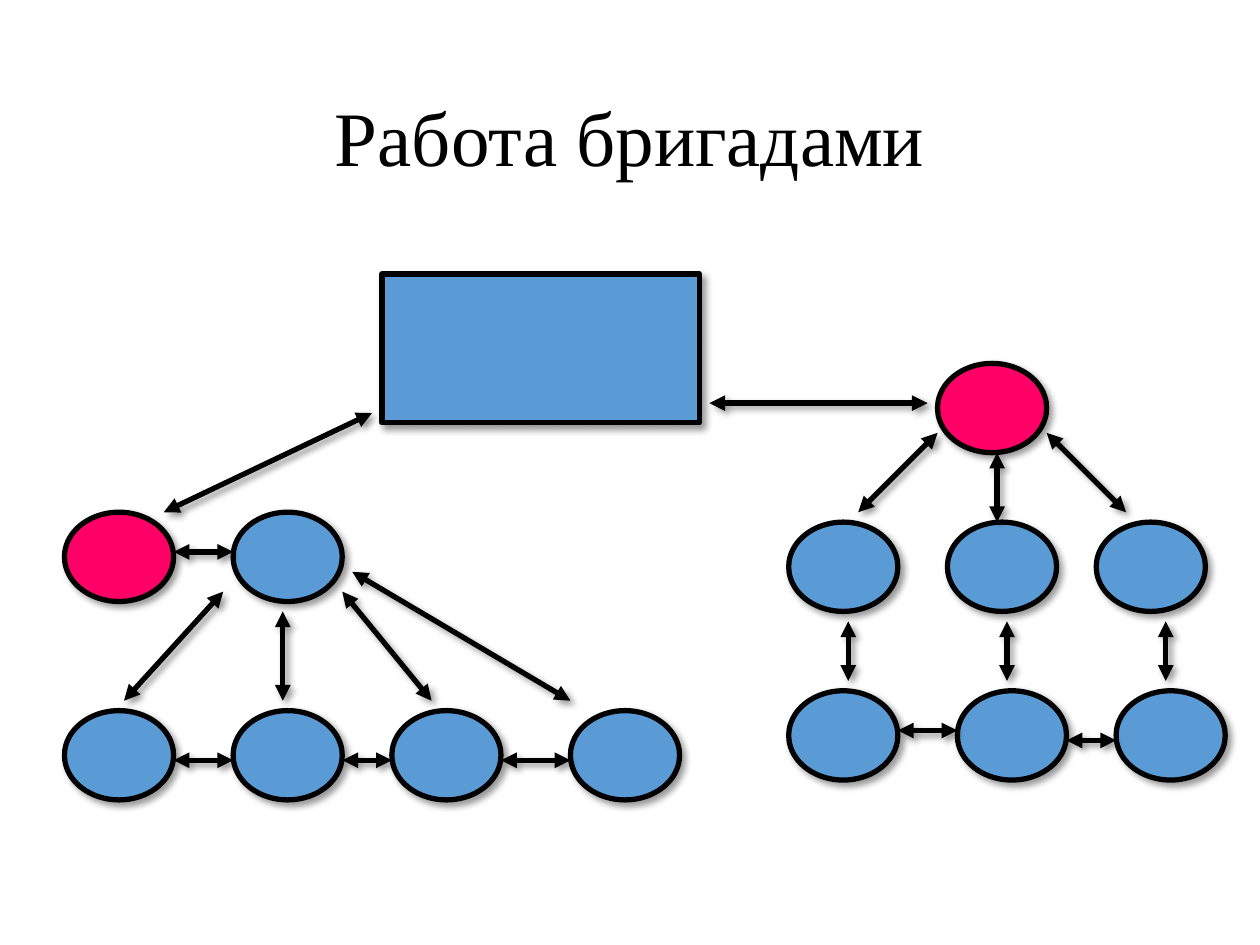
import pptx
import pptx.dml.color
import pptx.enum.shapes
import pptx.enum.text
import pptx.oxml
import pptx.oxml.ns
import pptx.util

COLORS = {"member": "5B9BD5", "leader": "FF0066", "ink": "000000"}
FONT = "Times New Roman"

# The diagram sits on a 2 mm grid, shifted a little from the slide's corner.
CELL = pptx.util.Mm(2)
SHIFT_X, SHIFT_Y = 0.5, 0.63
NODE_W, NODE_H = 11, 9

LEFT_LEADER = (6, 51)
LEFT_DEPUTY = (23, 51)
LEFT_CREW_COLS, LEFT_CREW_ROW = (6, 23, 39, 57), 71
RIGHT_LEADER = (94, 36)
RIGHT_UPPER_COLS, RIGHT_UPPER_ROW = (79, 95, 110), 52
RIGHT_LOWER_COLS, RIGHT_LOWER_ROW = (79, 96, 112), 69

# Start column and row, end column and row
ARROWS = [
    (37, 41, 16, 51), (93, 40, 71, 40),                         # boss to leaders
    (94, 43, 86, 51), (100, 45, 100, 52), (105, 43, 113, 51),   # right leader
    (22, 59, 12, 70), (28, 61, 28, 70),                         # left deputy
    (34, 59, 43, 70), (35, 57, 57, 70),
    *[(col, 62, col, 68) for col in (85, 101, 117)],            # right crew pairs
]


def rgb(name):
    return pptx.dml.color.RGBColor.from_string(COLORS[name])


def grid(col, row):
    return int((col + SHIFT_X) * CELL), int((row + SHIFT_Y) * CELL)


def add_shadow(sp):
    sp._element.spPr.append(pptx.oxml.parse_xml(
        f'<a:effectLst {pptx.oxml.ns.nsdecls("a")}>'
        '<a:outerShdw blurRad="50800" dist="38100" dir="2700000" algn="tl" rotWithShape="0">'
        f'<a:srgbClr val="{COLORS["ink"]}"><a:alpha val="40000"/></a:srgbClr>'
        '</a:outerShdw></a:effectLst>'))


def style_line(sp):
    sp.line.color.rgb = rgb("ink")
    sp.line.width = pptx.util.Pt(3)


def add_box(slide, kind, col, row, cols, rows, color):
    sp = slide.shapes.add_shape(kind, *grid(col, row), cols * CELL, rows * CELL)
    sp.fill.solid()
    sp.fill.fore_color.rgb = rgb(color)
    style_line(sp)
    add_shadow(sp)


def add_node(slide, col, row, color="member"):
    add_box(slide, pptx.enum.shapes.MSO_SHAPE.OVAL, col, row, NODE_W, NODE_H, color)


def add_arrow(slide, col1, row1, col2, row2):
    sp = slide.shapes.add_connector(pptx.enum.shapes.MSO_CONNECTOR.STRAIGHT,
                                    *grid(col1, row1), *grid(col2, row2))
    style_line(sp)
    ln = sp.line._get_or_add_ln()
    for end in ("headEnd", "tailEnd"):
        ln.append(pptx.oxml.parse_xml(
            f'<a:{end} {pptx.oxml.ns.nsdecls("a")} type="triangle"/>'))
    add_shadow(sp)


def link_neighbours(slide, cols, rows):
    """Join each node in a line to the next; rows holds the height of each arrow."""
    for left, right, row in zip(cols, cols[1:], rows):
        add_arrow(slide, right, row, left + NODE_W, row)


def add_title(slide, text, prs):
    w, h = prs.slide_width, prs.slide_height
    sp = slide.shapes.add_textbox(int(w * 0.069), int(h * 0.053),
                                  int(w * 0.862), int(h * 0.193))
    tf = sp.text_frame
    tf.word_wrap = True
    tf.vertical_anchor = pptx.enum.text.MSO_ANCHOR.MIDDLE
    p = tf.paragraphs[0]
    p.text = text
    p.alignment = pptx.enum.text.PP_ALIGN.CENTER
    p.line_spacing = 0.9
    p.font.name = FONT
    p.font.size = pptx.util.Pt(44)
    p.font.color.rgb = rgb("ink")


def main():
    prs = pptx.Presentation()
    prs.slide_width = pptx.util.Inches(10)
    prs.slide_height = pptx.util.Inches(7.5)
    slide = prs.slides.add_slide(prs.slide_layouts[6])

    add_title(slide, "Работа бригадами", prs)
    add_box(slide, pptx.enum.shapes.MSO_SHAPE.RECTANGLE, 38, 27, 32, 15, "member")

    for leader in (LEFT_LEADER, RIGHT_LEADER):
        add_node(slide, *leader, "leader")
    add_node(slide, *LEFT_DEPUTY)
    for cols, row in ((LEFT_CREW_COLS, LEFT_CREW_ROW),
                      (RIGHT_UPPER_COLS, RIGHT_UPPER_ROW),
                      (RIGHT_LOWER_COLS, RIGHT_LOWER_ROW)):
        for col in cols:
            add_node(slide, col, row)

    for arrow in ARROWS:
        add_arrow(slide, *arrow)
    link_neighbours(slide, (LEFT_LEADER[0], LEFT_DEPUTY[0]), (55,))
    link_neighbours(slide, LEFT_CREW_COLS, (76, 76, 76))
    link_neighbours(slide, RIGHT_LOWER_COLS, (73, 74))

    prs.save("out.pptx")


if __name__ == "__main__":
    main()
